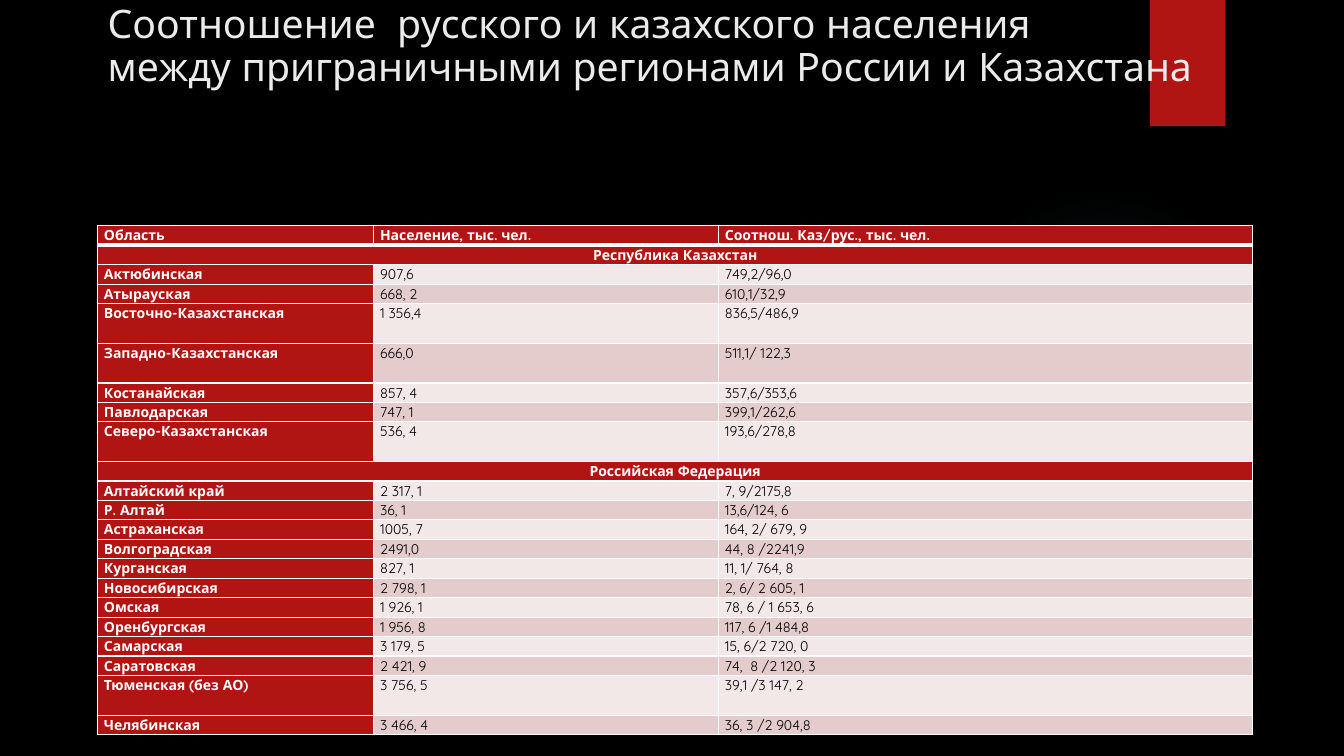
"""Builds a slide comparing the Russian and Kazakh population of border regions."""
from lxml import etree
from pptx import Presentation
from pptx.dml.color import RGBColor
from pptx.enum.shapes import MSO_SHAPE
from pptx.enum.text import MSO_ANCHOR, PP_ALIGN
from pptx.oxml.ns import nsdecls, qn
from pptx.oxml import parse_xml
from pptx.util import Cm, Pt

LEFT, CENTER = PP_ALIGN.LEFT, PP_ALIGN.CENTER
TOP = MSO_ANCHOR.TOP
RECTANGLE, OVAL = MSO_SHAPE.RECTANGLE, MSO_SHAPE.OVAL

TITLE_LINES = [
    "Соотношение  русского и казахского населения",
    "между приграничными регионами России и Казахстана",
]
HEADINGS = ("Область", "Население, тыс. чел.", "Соотнош. Каз/рус., тыс. чел.")
COUNTRIES = {
    "Республика Казахстан": [
        ("Актюбинская", "907,6", "749,2/96,0"),
        ("Атырауская", "668, 2", "610,1/32,9"),
        ("Восточно-Казахстанская", "1 356,4", "836,5/486,9"),
        ("Западно-Казахстанская", "666,0", "511,1/ 122,3"),
        ("Костанайская", "857, 4", "357,6/353,6"),
        ("Павлодарская", "747, 1", "399,1/262,6"),
        ("Северо-Казахстанская", "536, 4", "193,6/278,8"),
    ],
    "Российская Федерация": [
        ("Алтайский край", "2 317, 1", "7, 9/2175,8"),
        ("Р. Алтай", "36, 1", "13,6/124, 6"),
        ("Астраханская", "1005, 7", "164, 2/ 679, 9"),
        ("Волгоградская", "2491,0", "44, 8 /2241,9"),
        ("Курганская", "827, 1", "11, 1/ 764, 8"),
        ("Новосибирская", "2 798, 1", "2, 6/ 2 605, 1"),
        ("Омская", "1 926, 1", "78, 6 / 1 653, 6"),
        ("Оренбургская", "1 956, 8", "117, 6 /1 484,8"),
        ("Самарская", "3 179, 5", "15, 6/2 720, 0"),
        ("Саратовская", "2 421, 9", "74,  8 /2 120, 3"),
        ("Тюменская (без АО)", "3 756, 5", "39,1 /3 147, 2"),
        ("Челябинская", "3 466, 4", "36, 3 /2 904,8"),
    ],
}
TALL_REGIONS = {"Восточно-Казахстанская", "Западно-Казахстанская",
                "Северо-Казахстанская", "Тюменская (без АО)"}

FONT = "Quicksand"
RED, WHITE, BLACK = "B01513", "FFFFFF", "000000"
BANDS = ("F2E8E7", "E4CCCC")
GLOW, GLOW_STOPS = "50B9C1", [(0, 7), (36, 6), (69, 0)]
COLUMN_WIDTHS = (6.96, 8.69, 13.46)
ROW_HEIGHT, TALL_HEIGHT = 0.49, 1
CELL_FORMAT = {"margin_left": Cm(0.16), "margin_right": Cm(0.16),
               "margin_top": 0, "margin_bottom": 0, "vertical_anchor": TOP}


def color(hex_code):
    return RGBColor.from_string(hex_code)


def apply(target, values):
    for name, value in values.items():
        setattr(target, name, value)


def style_font(font, size, hex_code, bold=False):
    apply(font, {"name": FONT, "size": Pt(size), "bold": bold})
    font.color.rgb = color(hex_code)


def add_plain_shape(slide, kind, left, top, width, height):
    shape = slide.shapes.add_shape(kind, Cm(left), Cm(top), Cm(width), Cm(height))
    shape.shadow.inherit = False
    shape.line.fill.background()
    return shape


def add_glow(slide):
    glow = add_plain_shape(slide, OVAL, 23.9, 4.65, 7.82, 7.82)
    stops = "".join(
        f'<a:gs pos="{pos * 1000}"><a:srgbClr val="{GLOW}">'
        f'<a:alpha val="{alpha * 1000}"/></a:srgbClr></a:gs>'
        for pos, alpha in GLOW_STOPS)
    gradient = parse_xml(
        f'<a:gradFill {nsdecls("a")}><a:gsLst>{stops}</a:gsLst><a:path path="circle">'
        '<a:fillToRect l="50000" t="50000" r="50000" b="50000"/></a:path></a:gradFill>')
    glow._element.spPr.find(qn("a:prstGeom")).addnext(gradient)


def add_title(slide):
    title = slide.shapes.title
    apply(title, {"left": Cm(2.46), "top": Cm(0), "width": Cm(28.24), "height": Cm(5)})
    apply(title.text_frame, {"vertical_anchor": TOP, "word_wrap": True})
    paragraph = title.text_frame.paragraphs[0]
    apply(paragraph, {"alignment": LEFT, "line_spacing": 0.9})
    for number, line in enumerate(TITLE_LINES):
        if number:
            paragraph.add_line_break()
        run = paragraph.add_run()
        run.text = line
        style_font(run.font, 28, "EBEBEB")
    slide.shapes._spTree.append(title._element)


def add_borders(cell, widths):
    properties = cell._tc.get_or_add_tcPr()
    for side, width in zip("LRTB", widths):
        border = etree.SubElement(properties, qn(f"a:ln{side}"), w=str(Pt(width)))
        fill = etree.SubElement(border, qn("a:solidFill"))
        etree.SubElement(fill, qn("a:srgbClr"), val=WHITE)


def fill_cell(cell, text, row, is_label, alignment):
    add_borders(cell, (1, 1, 3 if row == 1 else 1, 3 if row == 0 else 1))
    apply(cell, CELL_FORMAT)
    cell.fill.solid()
    cell.fill.fore_color.rgb = color(RED if is_label else BANDS[row % 2])
    cell.text = text
    paragraph = cell.text_frame.paragraphs[0]
    apply(paragraph, {"alignment": alignment, "line_spacing": 1.07, "space_after": Pt(8)})
    for run in paragraph.runs:
        style_font(run.font, 10, WHITE if is_label else BLACK, is_label)


def add_population_table(slide):
    rows = [HEADINGS]
    for country, regions in COUNTRIES.items():
        rows += [(country,), *regions]
    heights = [TALL_HEIGHT if row[0] in TALL_REGIONS else ROW_HEIGHT for row in rows]
    table = slide.shapes.add_table(
        len(rows), len(HEADINGS), Cm(2.46), Cm(5.69),
        Cm(sum(COLUMN_WIDTHS)), Cm(sum(heights))).table
    for column, width in zip(table.columns, COLUMN_WIDTHS):
        column.width = Cm(width)
    for number, (row, height) in enumerate(zip(rows, heights)):
        table.rows[number].height = Cm(height)
        is_country = len(row) == 1
        if is_country:
            table.cell(number, 0).merge(table.cell(number, len(HEADINGS) - 1))
        for column, text in enumerate(row):
            fill_cell(table.cell(number, column), text, number,
                      number == 0 or column == 0, CENTER if is_country else LEFT)


def main():
    deck = Presentation()
    apply(deck, {"slide_width": Cm(33.87), "slide_height": Cm(19.05)})
    slide = deck.slides.add_slide(deck.slide_layouts[5])
    slide.background.fill.solid()
    slide.background.fill.fore_color.rgb = color(BLACK)
    add_glow(slide)
    ribbon = add_plain_shape(slide, RECTANGLE, 28.98, 0, 1.9, 3.18)
    ribbon.fill.solid()
    ribbon.fill.fore_color.rgb = color(RED)
    add_title(slide)
    add_population_table(slide)
    deck.save("out.pptx")


if __name__ == "__main__":
    main()
